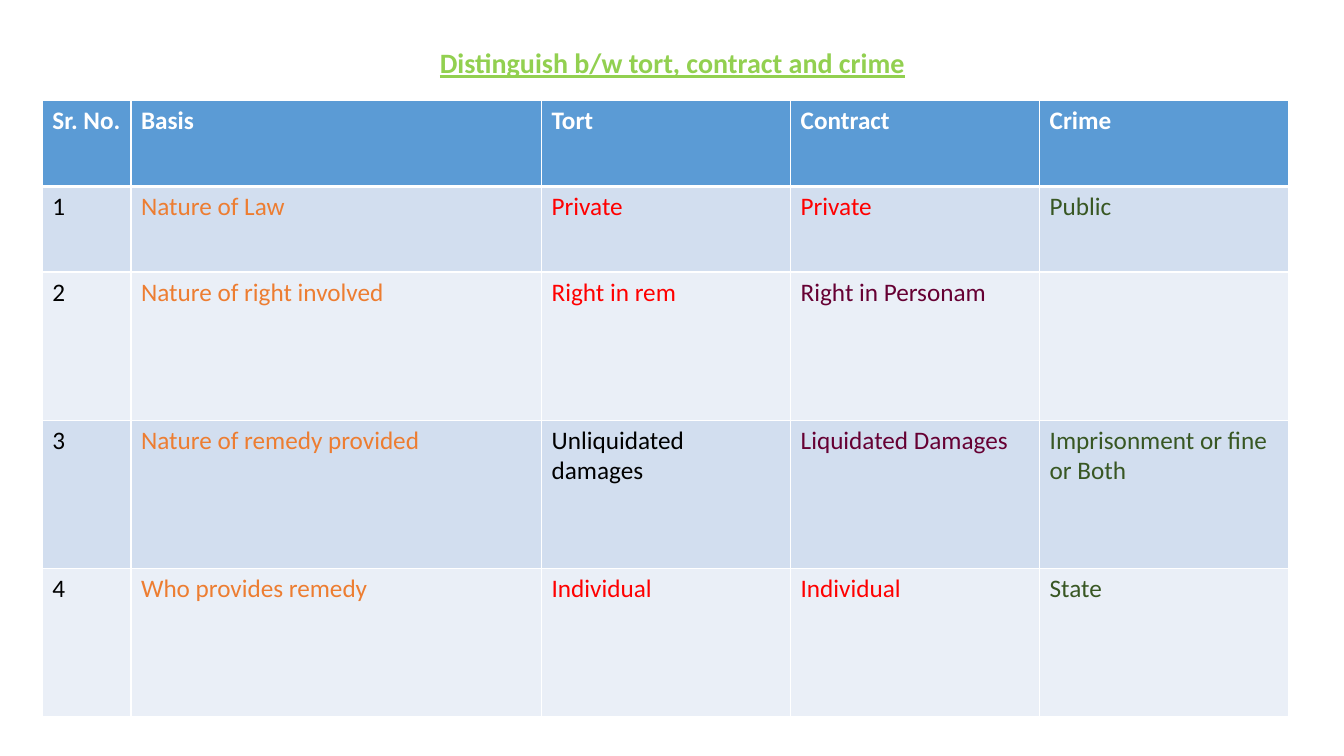
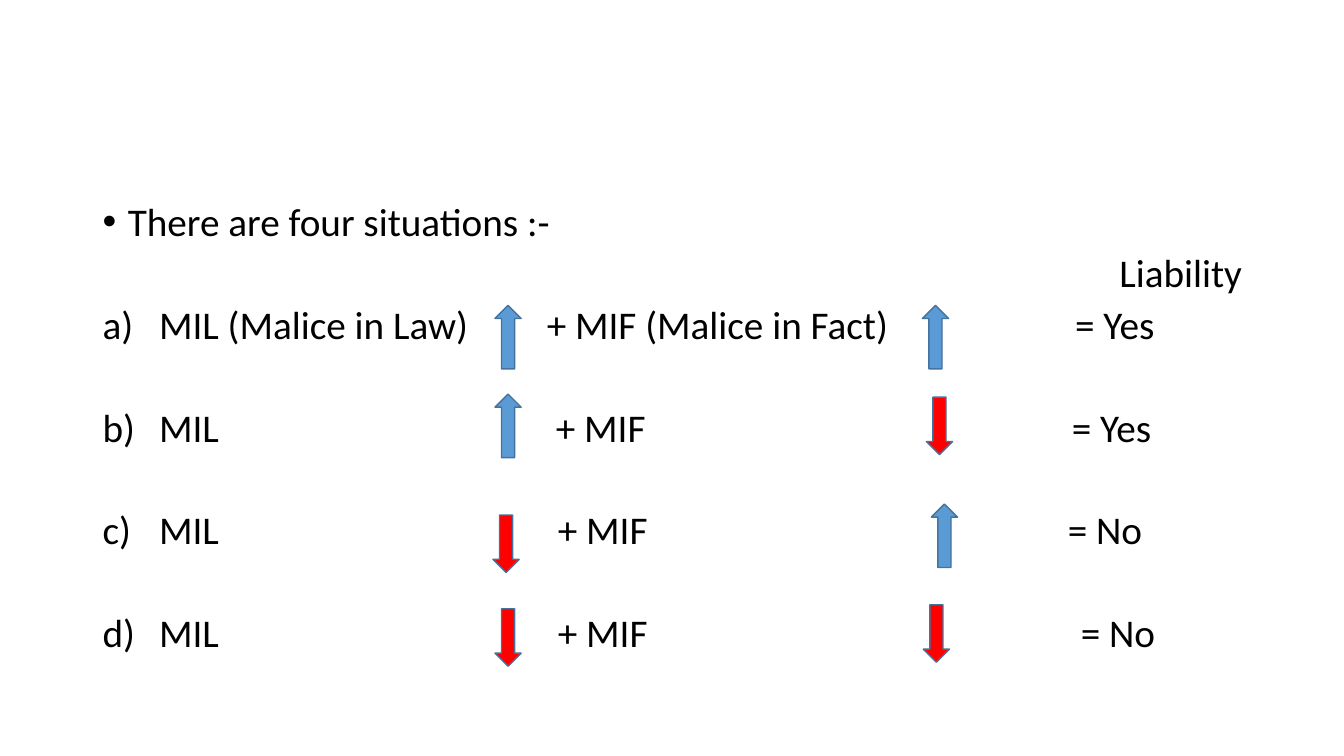
import pptx
import pptx.util
import pptx.dml.color
import pptx.enum.shapes
import pptx.enum.text
import pptx.oxml.ns
import lxml.etree

COLORS = {
    "title": "92D050",
    "header": "5B9BD5",
    "band_dark": "D2DEEF",
    "band_light": "EAEFF7",
    "white": "FFFFFF",
    "black": "000000",
    "basis": "ED7D31",
    "red": "FF0000",
    "plum": "660033",
    "green": "385723",
    "up": "5B9BD5",
    "outline": "43739E",
}
FONT = "Calibri"
ALIGN = pptx.enum.text.PP_ALIGN
ARROW = pptx.enum.shapes.MSO_SHAPE
qn = pptx.oxml.ns.qn

deck = pptx.Presentation()
deck.slide_width = pptx.util.Inches(13.33)
deck.slide_height = pptx.util.Inches(7.5)
column = deck.slide_width / 100
row = deck.slide_height / 100
blank = deck.slide_layouts[6]


def place(left, top, width, height):
    return [int(share * unit) for share, unit in zip((left, top, width, height), (column, row) * 2)]


def write(paragraph, text, size=18, color="black", bold=False, underline=False,
          align=ALIGN.LEFT, spacing=None, before=0):
    paragraph.alignment = align
    paragraph.line_spacing = spacing
    paragraph.space_before = pptx.util.Pt(before)
    run = paragraph.add_run()
    run.text = text
    run.font.name = FONT
    run.font.size = pptx.util.Pt(size)
    run.font.bold = bold
    run.font.underline = underline
    run.font.color.rgb = pptx.dml.color.RGBColor.from_string(COLORS[color])


comparison = deck.slides.add_slide(blank)
heading = comparison.shapes.add_textbox(*place(6.9, 5.33, 86.25, 6.4)).text_frame
heading.word_wrap = True
heading.vertical_anchor = pptx.enum.text.MSO_ANCHOR.MIDDLE
write(heading.paragraphs[0], "Distinguish b/w tort, contract and crime", size=20,
      color="title", bold=True, underline=True, align=ALIGN.CENTER, spacing=0.9)

distinctions = [
    [("Sr. No.", "white"), ("Basis", "white"), ("Tort", "white"),
     ("Contract", "white"), ("Crime", "white")],
    [("1", "black"), ("Nature of Law", "basis"), ("Private", "red"),
     ("Private", "red"), ("Public", "green")],
    [("2", "black"), ("Nature of right involved", "basis"), ("Right in rem", "red"),
     ("Right in Personam", "plum"), ("", "green")],
    [("3", "black"), ("Nature of remedy provided", "basis"), ("Unliquidated damages", "black"),
     ("Liquidated Damages", "plum"), ("Imprisonment or fine or Both", "green")],
    [("4", "black"), ("Who provides remedy", "basis"), ("Individual", "red"),
     ("Individual", "red"), ("State", "green")],
]
column_shares = [6.6, 30.55, 18.53, 18.53, 18.53]
row_shares = [11.33] * 2 + [19.6] * 3
fills = ["header"] + ["band_dark", "band_light"] * 2

grid = comparison.shapes.add_table(
    len(row_shares), len(column_shares),
    *place(3.15, 13.33, sum(column_shares), sum(row_shares))).table
for grid_column, share in zip(grid.columns, column_shares):
    grid_column.width = int(share * column)
for r, (entries, share, fill) in enumerate(zip(distinctions, row_shares, fills)):
    grid.rows[r].height = int(share * row)
    for c, (text, color) in enumerate(entries):
        cell = grid.cell(r, c)
        if text:
            write(cell.text_frame.paragraphs[0], text, color=color, bold=r == 0)
        properties = cell._tc.get_or_add_tcPr()
        for side in ("lnL", "lnR", "lnT", "lnB"):
            heavy = (r, side) in ((0, "lnB"), (1, "lnT"))
            border = lxml.etree.SubElement(properties, qn("a:" + side),
                                           w=str(pptx.util.Pt(3 if heavy else 1)))
            paint = lxml.etree.SubElement(border, qn("a:solidFill"))
            lxml.etree.SubElement(paint, qn("a:srgbClr"), val=COLORS["white"])
        cell.fill.solid()
        cell.fill.fore_color.rgb = pptx.dml.color.RGBColor.from_string(COLORS[fill])

malice = deck.slides.add_slide(blank)
text_left = 7.65
situations = malice.shapes.add_textbox(*place(6.9, 26.67, 86.25, 63.47)).text_frame
situations.word_wrap = True

intro = situations.paragraphs[0]
intro_properties = intro._p.get_or_add_pPr()
intro_properties.set("marL", str(pptx.util.Inches(0.25)))
intro_properties.set("indent", str(pptx.util.Inches(-0.25)))
lxml.etree.SubElement(intro_properties, qn("a:buFont"), typeface="Arial")
lxml.etree.SubElement(intro_properties, qn("a:buChar"), char="•")
write(intro, "There are four situations :-", size=28, spacing=0.8)
write(situations.add_paragraph(), "Liability", size=28, align=ALIGN.RIGHT, spacing=0.8, before=9.7)

cases = [
    ("MIL (Malice in Law)\t+ MIF (Malice in Fact)\t= Yes", (40.7, 80), 9.7),
    ("MIL\t+ MIF\t= Yes", (41.37, 79.76), 46.6),
    ("MIL\t+ MIF\t= No", (41.52, 79.46), 46.6),
    ("MIL\t+ MIF\t= No", (41.52, 80.43), 46.6),
]
for text, stops, before in cases:
    case = situations.add_paragraph()
    case_properties = case._p.get_or_add_pPr()
    case_properties.set("marL", str(pptx.util.Inches(0.56)))
    case_properties.set("indent", str(pptx.util.Inches(-0.56)))
    lxml.etree.SubElement(case_properties, qn("a:buFont"), typeface="+mj-lt")
    lxml.etree.SubElement(case_properties, qn("a:buAutoNum"), type="alphaLcParenR")
    tabs = lxml.etree.SubElement(case_properties, qn("a:tabLst"))
    for stop in stops:
        lxml.etree.SubElement(tabs, qn("a:tab"), pos=str(int((stop - text_left) * column)), algn="l")
    write(case, text, size=28, spacing=0.8, before=before)

arrow_styles = {"up": (ARROW.UP_ARROW, "up", 8.4), "down": (ARROW.DOWN_ARROW, "red", 7.6)}
arrows = [
    ("up", 36.83, 40.4), ("up", 68.63, 40.4),
    ("up", 36.83, 52.13), ("down", 68.93, 52.53),
    ("down", 36.68, 68.13), ("up", 69.3, 66.67),
    ("down", 36.83, 80.53), ("down", 68.7, 80),
]
for direction, left, top in arrows:
    outline, color, height = arrow_styles[direction]
    arrow = malice.shapes.add_shape(outline, *place(left, top, 1.95, height))
    arrow.shadow.inherit = False
    arrow.fill.solid()
    arrow.fill.fore_color.rgb = pptx.dml.color.RGBColor.from_string(COLORS[color])
    arrow.line.color.rgb = pptx.dml.color.RGBColor.from_string(COLORS["outline"])
    arrow.line.width = pptx.util.Pt(1)

deck.save("out.pptx")
